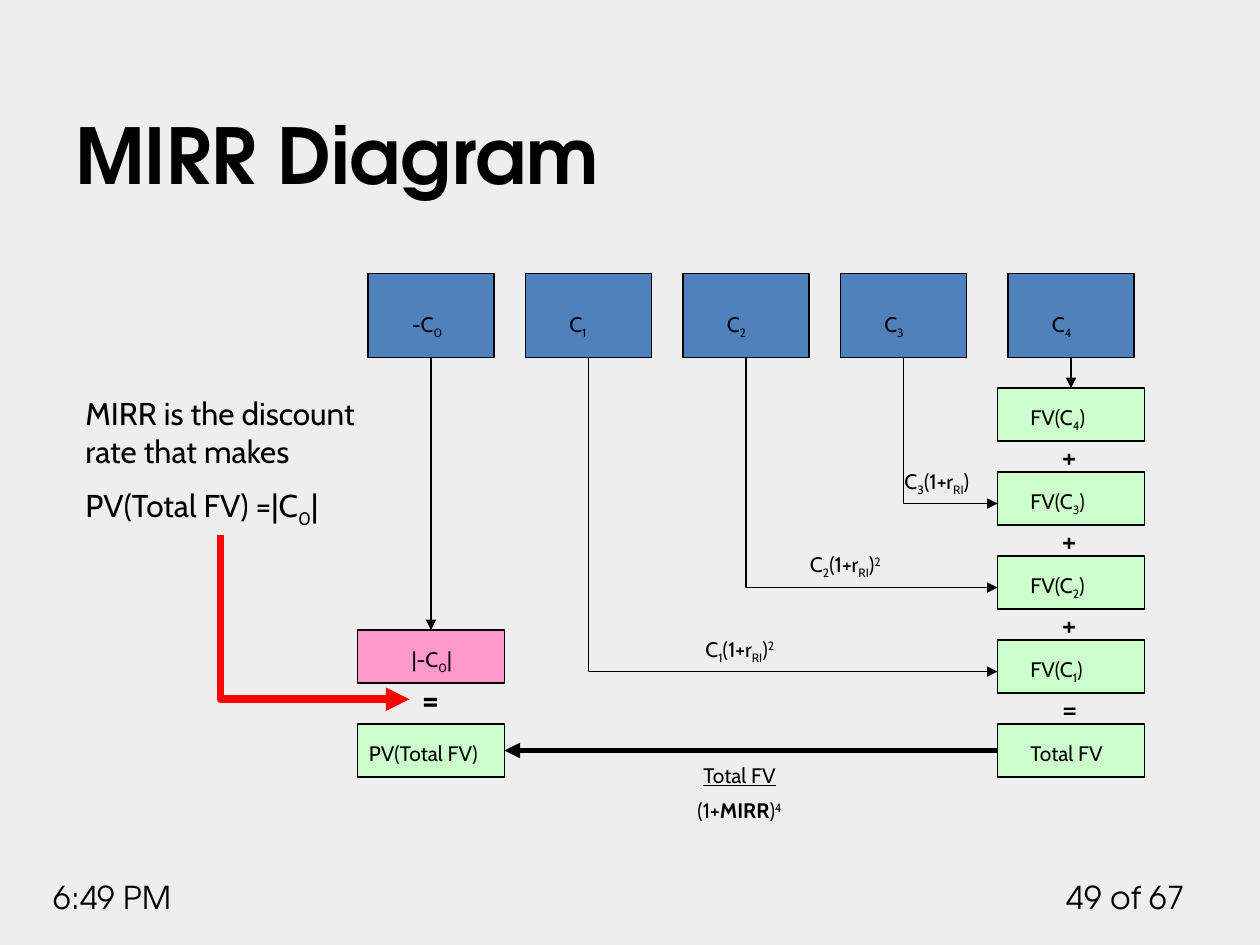
from lxml import etree
from pptx import Presentation
from pptx.dml.color import RGBColor
from pptx.enum import shapes, text
from pptx.oxml.ns import qn
from pptx.util import Inches, Pt

THEME = {
    "heading": "TeX Gyre Adventor", "body": "Cabin",
    "title": 44, "equals": 20, "note": 18, "label": 12,
    "back": "EEEEEE", "ink": "000000", "flow": "4F81BD",
    "value": "CCFFCC", "cost": "FF99CC", "pointer": "FF0000",
}

# Content: a run is a string, or a string with its style
SUB, SUP, BOLD, UNDER = "sub", "sup", "bold", "under"
TITLE = "MIRR Diagram"
CLOCK, PAGE = "6:49 PM", "49 of 67"
FLOWS = [["-C", ("0", SUB)]] + [["C", (n, SUB)] for n in "1234"]
FUTURE_VALUES = [["FV(C", (n, SUB), ")"] for n in "4321"] + [["Total FV"]]
OPERATORS = ["+", "+", "+", "="]
COST = ["|-C", ("0", SUB), "|"]
PRESENT_VALUE = ["PV(Total FV)"]
COMPOUND = ["(1+r", ("RI", SUB), ")"]
# flow number, its future value's row, label left, label top, label
GROWTH = [
    (3, 1, 7.08, 3.67, ["C", ("3", SUB), *COMPOUND]),
    (2, 2, 6.33, 4.33, ["C", ("2", SUB), *COMPOUND, ("2", SUP)]),
    (1, 3, 5.5, 5, ["C", ("1", SUB), *COMPOUND, ("2", SUP)]),
]
DISCOUNT = [[("Total FV", UNDER)],
            ["(1+", ("MIRR", BOLD), ")", ("4", SUP)]]
DEFINITION = [["MIRR is the discount rate that makes"],
              ["PV(Total FV) =|C", ("0", SUB), "|"]]

# Grid
FLOW_TOP, FLOW_W, FLOW_H = 2.17, 1, 2 / 3
FLOW_CENTRES = [3.42 + 1.25 * i for i in range(4)] + [8.5]
VALUE_TOP, VALUE_STEP, VALUE_W, VALUE_H = 3.08, 2 / 3, 7 / 6, 0.42
VALUE_LEFT = FLOW_CENTRES[4] - VALUE_W / 2
COST_LEFT = FLOW_CENTRES[0] - VALUE_W / 2
TOTAL_TOP = VALUE_TOP + 4 * VALUE_STEP

prs = Presentation()
prs.slide_width, prs.slide_height = Inches(10), Inches(7.5)
slide = prs.slides.add_slide(prs.slide_layouts[5])


def color(name):
    return RGBColor.from_string(THEME[name])


def style_font(font, size, face="body"):
    font.name, font.size = THEME[face], Pt(THEME[size])
    font.color.rgb = color("ink")


def write(left, top, width, height, lines, size="label", face="body",
          align=text.PP_ALIGN.LEFT):
    frame = slide.shapes.add_textbox(
        *map(Inches, (left, top, width, height))).text_frame
    frame.word_wrap = True
    for i, pieces in enumerate(lines):
        line = frame.add_paragraph() if i else frame.paragraphs[0]
        line.alignment = align
        if i:
            line.space_before = Pt(THEME[size] / 2)
        for piece in pieces:
            words, style = (piece, None) if isinstance(piece, str) else piece
            run = line.add_run()
            run.text = words
            style_font(run.font, size, face)
            if style == BOLD:
                run.font.bold = True
            elif style == UNDER:
                run.font.underline = True
            elif style:
                run.font._element.set("baseline",
                                      "-25000" if style == SUB else "30000")


def box(left, top, width, height, fill):
    shape = slide.shapes.add_shape(
        shapes.MSO_SHAPE.FLOWCHART_PROCESS,
        *map(Inches, (left, top, width, height)))
    shape.shadow.inherit = False
    shape.fill.solid()
    shape.fill.fore_color.rgb = color(fill)
    shape.line.color.rgb = color("ink")
    shape.line.width = Pt(1)
    return shape


def style_arrow(arrow, ink="ink", weight=1):
    arrow.line.color.rgb = color(ink)
    arrow.line.width = Pt(weight)
    etree.SubElement(arrow.line._get_or_add_ln(), qn("a:tailEnd"),
                     type="triangle")
    etree.SubElement(arrow._element.spPr, qn("a:effectLst"))


def join(start, start_side, end, end_side, weight=1):
    arrow = slide.shapes.add_connector(shapes.MSO_CONNECTOR.STRAIGHT, 0, 0, 0, 0)
    arrow.begin_connect(start, start_side)
    arrow.end_connect(end, end_side)
    style_arrow(arrow, weight=weight)


def down_then_right(x1, y1, x2, y2, ink="ink", weight=1):
    """One-bend arrow: a quarter turn swaps its width and height."""
    across, down = x2 - x1, y2 - y1
    left, top = (x1 + x2 - down) / 2, (y1 + y2 - across) / 2
    arrow = slide.shapes.add_connector(
        shapes.MSO_CONNECTOR.ELBOW,
        *map(Inches, (left, top, left + down, top + across)))
    props = arrow._element.spPr
    props.find(qn("a:prstGeom")).set("prst", "bentConnector2")
    frame = props.find(qn("a:xfrm"))
    frame.set("rot", str(270 * 60000))
    frame.set("flipH", "1")
    style_arrow(arrow, ink, weight)


# Background, title and footer
slide.background.fill.solid()
slide.background.fill.fore_color.rgb = color("back")
title = slide.shapes.title
title.left, title.top, title.width, title.height = map(
    Inches, (0.5, 0.39, 9, 1.25))
title.text_frame.text = TITLE
title.text_frame.auto_size = text.MSO_AUTO_SIZE.NONE
title.text_frame.vertical_anchor = text.MSO_ANCHOR.BOTTOM
heading = title.text_frame.paragraphs[0]
heading.alignment = text.PP_ALIGN.LEFT
style_font(heading.runs[0].font, "title", "heading")
heading.runs[0].font.bold = True
write(0.33, 6.92, 1.58, 0.4, [[CLOCK]], "note", "heading")
write(8.33, 6.92, 1.17, 0.4, [[PAGE]], "note", "heading", text.PP_ALIGN.RIGHT)

# Cash flows along the top
flows = []
for centre, label in zip(FLOW_CENTRES, FLOWS):
    flows.append(box(centre - FLOW_W / 2, FLOW_TOP, FLOW_W, FLOW_H, "flow"))
    write(centre - 0.25, FLOW_TOP + 0.25, 0.5, 0.3, [label])

# Future values added up on the right
values = []
for row, label in enumerate(FUTURE_VALUES):
    top = VALUE_TOP + row * VALUE_STEP
    values.append(box(VALUE_LEFT, top, VALUE_W, VALUE_H, "value"))
    write(8.08, top + 0.08, 0.92, 0.3, [label])
for row, sign in enumerate(OPERATORS):
    write(8.33, VALUE_TOP + 0.34 + row * VALUE_STEP, 0.33, 0.4, [[sign]], "note")

# Cost against present value on the left
cost = box(COST_LEFT, 5, VALUE_W, VALUE_H, "cost")
write(3.17, 5.08, 0.58, 0.3, [COST])
present = box(COST_LEFT, TOTAL_TOP, VALUE_W, VALUE_H, "value")
write(2.83, TOTAL_TOP + 0.08, VALUE_W, 0.3, [PRESENT_VALUE])
write(3.25, 5.33, 0.33, 0.43, [[("=", BOLD)]], "equals")

# Arrows and growth labels
join(flows[0], 2, cost, 0)
join(flows[4], 2, values[0], 0)
join(values[4], 1, present, 3, weight=3)
for flow, row, left, top, label in GROWTH:
    down_then_right(FLOW_CENTRES[flow], FLOW_TOP + FLOW_H,
                    VALUE_LEFT, VALUE_TOP + row * VALUE_STEP + 0.25)
    write(left, top, 1, 0.3, [label])
write(5.08, 6, 1.58, 0.6, DISCOUNT, align=text.PP_ALIGN.CENTER)

# Definition and its pointer
write(0.58, 3.08, 2.75, 1.15, DEFINITION, "note")
down_then_right(1.75, 4.25, 3.25, 5.55, "pointer", 4.5)

prs.save("out.pptx")
